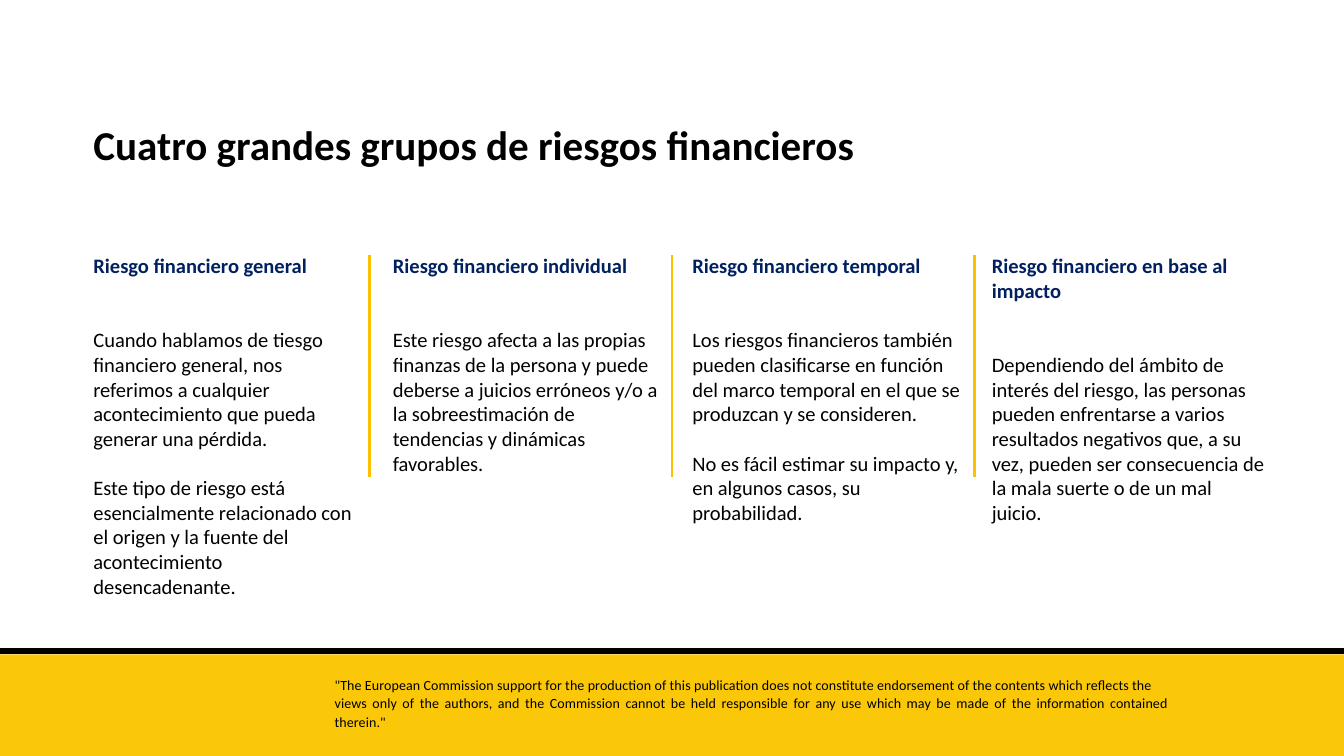
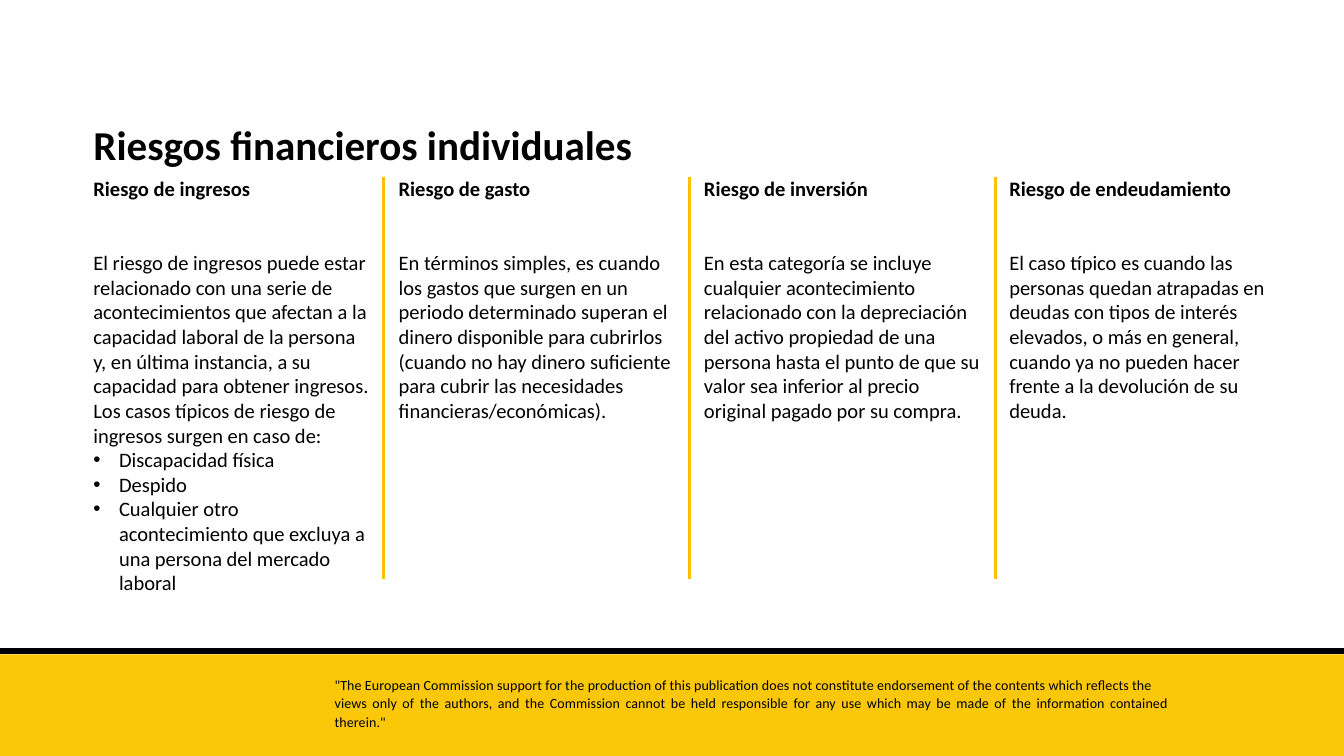
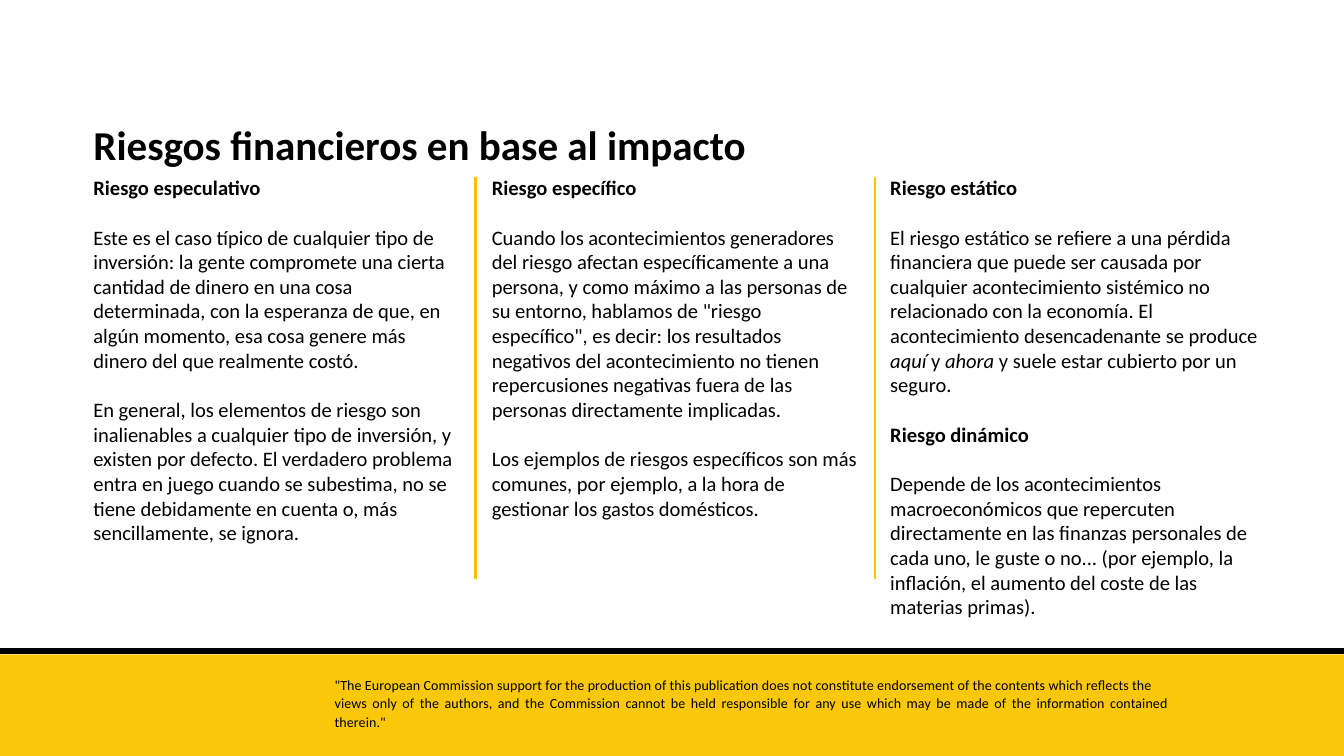
from lxml.etree import SubElement
from pptx import Presentation
from pptx.dml.color import RGBColor
from pptx.enum.shapes import MSO_CONNECTOR, MSO_SHAPE
from pptx.enum.text import MSO_ANCHOR, MSO_AUTO_SIZE, PP_ALIGN
from pptx.oxml.ns import qn
from pptx.util import Cm, Pt

COLORS = {"black": "000000", "navy": "002060", "band": "FAC709", "divider": "FFC000"}
FONT = "Calibri"
SLIDE_WIDTH, SLIDE_HEIGHT = 50.8, 28.58
LEFT_MARGIN, RIGHT_EDGE = 3.28, 48.06
BAND_TOP, BAND_RULE = 24.74, 24.61
BLANK_LINE = 26.5
DISCLAIMER = [
    ('"The European Commission support for the production of this publication does not '
     'constitute endorsement of the contents which reflects the', Pt(16.1)),
    ('views only of the authors, and the Commission cannot be held responsible for any use '
     'which may be made of the information contained therein."', 1.13),
]


def heading(text, blanks=0):
    return {"text": text, "blanks": blanks, "bold": True}


def body(text, blanks=0):
    """Plain paragraph; words between asterisks become italic."""
    return {"text": text, "blanks": blanks}


def bullet(text):
    return {"text": text, "blanks": 0, "bullet": True}


class Deck:
    def __init__(self):
        self.presentation = Presentation()
        self.presentation.slide_width = Cm(SLIDE_WIDTH)
        self.presentation.slide_height = Cm(SLIDE_HEIGHT)
        self.slide = None

    def color(self, name):
        return RGBColor.from_string(COLORS[name])

    def format_run(self, run, size, color="black", bold=False, italic=False):
        run.font.name = FONT
        run.font.size = Pt(size)
        run.font.bold = bold
        run.font.italic = italic
        run.font.color.rgb = self.color(color)

    def add_slide(self, title, title_width):
        self.slide = self.presentation.slides.add_slide(self.presentation.slide_layouts[5])
        self.add_footer()
        self.set_title(title, title_width)

    def set_title(self, title, width):
        shape = self.slide.shapes.title
        shape.left, shape.top = Cm(LEFT_MARGIN), Cm(4.37)
        shape.width, shape.height = Cm(width), Cm(2.13)
        frame = shape.text_frame
        frame.text = title
        frame.word_wrap = True
        frame.auto_size = MSO_AUTO_SIZE.SHAPE_TO_FIT_TEXT
        frame.vertical_anchor = MSO_ANCHOR.TOP
        paragraph = frame.paragraphs[0]
        paragraph.alignment = PP_ALIGN.LEFT
        self.format_run(paragraph.runs[0], 44, bold=True)

    def add_line(self, start, end, color, weight):
        line = self.slide.shapes.add_connector(
            MSO_CONNECTOR.STRAIGHT, *(Cm(value) for value in start + end))
        line.line.color.rgb = self.color(color)
        line.line.width = Pt(weight)
        SubElement(line._element.spPr, qn("a:effectLst"))

    def add_text_box(self, left, top, width, height):
        box = self.slide.shapes.add_textbox(Cm(left), Cm(top), Cm(width), Cm(height))
        box.text_frame.word_wrap = True
        box.text_frame.auto_size = MSO_AUTO_SIZE.SHAPE_TO_FIT_TEXT
        return box.text_frame

    def paragraphs(self, frame, items):
        """Yield each item with its paragraph, reusing the first one in the frame."""
        for index, item in enumerate(items):
            yield item, frame.add_paragraph() if index else frame.paragraphs[0]

    def add_footer(self):
        band = self.slide.shapes.add_shape(
            MSO_SHAPE.RECTANGLE, 0, Cm(BAND_TOP), Cm(SLIDE_WIDTH), Cm(SLIDE_HEIGHT - BAND_TOP))
        band.shadow.inherit = False
        band.fill.solid()
        band.fill.fore_color.rgb = self.color("band")
        band.line.fill.background()
        self.add_line((0, BAND_RULE), (SLIDE_WIDTH, BAND_RULE), "black", 6.75)
        frame = self.add_text_box(12.37, 25.5, 32.08, 2.24)
        for (text, spacing), paragraph in self.paragraphs(frame, DISCLAIMER):
            paragraph.text = text
            paragraph.alignment = PP_ALIGN.JUSTIFY
            paragraph.line_spacing = spacing
            paragraph._p.get_or_add_pPr().set("marL", str(Cm(0.03)))
            self.format_run(paragraph.runs[0], 15)
            paragraph.runs[0].font._element.set("spc", "10")

    def add_bullet(self, paragraph):
        properties = paragraph._p.get_or_add_pPr()
        properties.set("marL", str(Cm(0.97)))
        properties.set("indent", str(-Cm(0.97)))
        SubElement(properties, qn("a:buFont"), typeface="Arial")
        SubElement(properties, qn("a:buChar"), char="•")

    def add_column(self, left, top, width, height, items, heading_color):
        frame = self.add_text_box(left, top, width, height)
        for item, paragraph in self.paragraphs(frame, items):
            if item.get("bullet"):
                self.add_bullet(paragraph)
            if item["blanks"]:
                paragraph.space_before = Pt(item["blanks"] * BLANK_LINE)
            bold = item.get("bold", False)
            for index, piece in enumerate(item["text"].split("*")):
                run = paragraph.add_run()
                run.text = piece
                self.format_run(run, 22, heading_color if bold else "black",
                                bold, italic=index % 2 == 1)

    def add_columns(self, columns, top, pitch, width, heading_color="black"):
        """Place (height, paragraphs) columns at equal steps inside the right edge."""
        for index, (height, items) in enumerate(columns):
            left = LEFT_MARGIN + index * pitch
            self.add_column(left, top, min(width, RIGHT_EDGE - left), height,
                            items, heading_color)

    def add_dividers(self, count, left, pitch, top, height):
        for index in range(count):
            x = left + index * pitch
            self.add_line((x, top), (x, top + height), "divider", 3)


RISK_GROUPS = [
    (13.41, [
        heading("Riesgo financiero general"),
        body("Cuando hablamos de tiesgo financiero general, nos referimos a cualquier "
             "acontecimiento que pueda generar una pérdida.", 2),
        body("Este tipo de riesgo está esencialmente relacionado con el origen y la fuente "
             "del acontecimiento desencadenante.", 1)]),
    (8.71, [
        heading("Riesgo financiero individual"),
        body("Este riesgo afecta a las propias finanzas de la persona y puede deberse a "
             "juicios erróneos y/o a la sobreestimación de tendencias y dinámicas "
             "favorables.", 2)]),
    (10.59, [
        heading("Riesgo financiero temporal"),
        body("Los riesgos financieros también pueden clasificarse en función del marco "
             "temporal en el que se produzcan y se consideren.", 2),
        body("No es fácil estimar su impacto y, en algunos casos, su probabilidad.", 1)]),
    (10.59, [
        heading("Riesgo financiero en base al impacto"),
        body("Dependiendo del ámbito de interés del riesgo, las personas pueden enfrentarse "
             "a varios resultados negativos que, a su vez, pueden ser consecuencia de la "
             "mala suerte o de un mal juicio.", 2)]),
]

INDIVIDUAL_RISKS = [
    (16.26, [
        heading("Riesgo de ingresos"),
        body("El riesgo de ingresos puede estar relacionado con una serie de "
             "acontecimientos que afectan a la capacidad laboral de la persona y, en última "
             "instancia, a su capacidad para obtener ingresos.", 2),
        body("Los casos típicos de riesgo de ingresos surgen en caso de:"),
        bullet("Discapacidad física"),
        bullet("Despido"),
        bullet("Cualquier otro acontecimiento que excluya a una persona del mercado "
               "laboral")]),
    (9.65, [
        heading("Riesgo de gasto"),
        body("En términos simples, es cuando los gastos que surgen en un periodo "
             "determinado superan el dinero disponible para cubrirlos (cuando no hay dinero "
             "suficiente para cubrir las necesidades financieras/económicas).", 2)]),
    (9.65, [
        heading("Riesgo de inversión"),
        body("En esta categoría se incluye cualquier acontecimiento relacionado con la "
             "depreciación del activo propiedad de una persona hasta el punto de que su "
             "valor sea inferior al precio original pagado por su compra.", 2)]),
    (10.59, [
        heading("Riesgo de endeudamiento"),
        body("El caso típico es cuando las personas quedan atrapadas en deudas con tipos de "
             "interés elevados, o más en general, cuando ya no pueden hacer frente a la "
             "devolución de su deuda.", 2)]),
]

IMPACT_RISKS = [
    (14.35, [
        heading("Riesgo especulativo"),
        body("Este es el caso típico de cualquier tipo de inversión: la gente compromete una "
             "cierta cantidad de dinero en una cosa determinada, con la esperanza de que, en "
             "algún momento, esa cosa genere más dinero del que realmente costó.", 1),
        body("En general, los elementos de riesgo son inalienables a cualquier tipo de "
             "inversión, y existen por defecto. El verdadero problema entra en juego cuando "
             "se subestima, no se tiene debidamente en cuenta o, más sencillamente, se "
             "ignora.", 1)]),
    (13.41, [
        heading("Riesgo específico"),
        body("Cuando los acontecimientos generadores del riesgo afectan específicamente a "
             "una persona, y como máximo a las personas de su entorno, hablamos de \"riesgo "
             "específico\", es decir: los resultados negativos del acontecimiento no tienen "
             "repercusiones negativas fuera de las personas directamente implicadas.", 1),
        body("Los ejemplos de riesgos específicos son más comunes, por ejemplo, a la hora de "
             "gestionar los gastos domésticos.", 1)]),
    (17.2, [
        heading("Riesgo estático"),
        body("El riesgo estático se refiere a una pérdida financiera que puede ser causada "
             "por cualquier acontecimiento sistémico no relacionado con la economía. El "
             "acontecimiento desencadenante se produce *aquí* y *ahora* y suele estar "
             "cubierto por un seguro.", 1),
        heading("Riesgo dinámico", 1),
        body("Depende de los acontecimientos macroeconómicos que repercuten directamente en "
             "las finanzas personales de cada uno, le guste o no... (por ejemplo, la "
             "inflación, el aumento del coste de las materias primas).", 1)]),
]


def main():
    deck = Deck()

    deck.add_slide("Cuatro grandes grupos de riesgos financieros", 30.38)
    deck.add_columns(RISK_GROUPS, top=9.45, pitch=11.32, width=10.82, heading_color="navy")
    deck.add_dividers(3, left=13.97, pitch=11.43, top=9.65, height=8.4)

    deck.add_slide("Riesgos financieros individuales", 26.04)
    deck.add_columns(INDIVIDUAL_RISKS, top=6.53, pitch=11.54, width=11.02)
    deck.add_dividers(3, left=14.5, pitch=11.56, top=6.7, height=15.18)

    deck.add_slide("Riesgos financieros en base al impacto", 26.04)
    deck.add_columns(IMPACT_RISKS, top=6.5, pitch=15.06, width=14.43)
    deck.add_dividers(2, left=17.96, pitch=15.11, top=6.7, height=15.18)

    deck.presentation.save("out.pptx")


if __name__ == "__main__":
    main()
